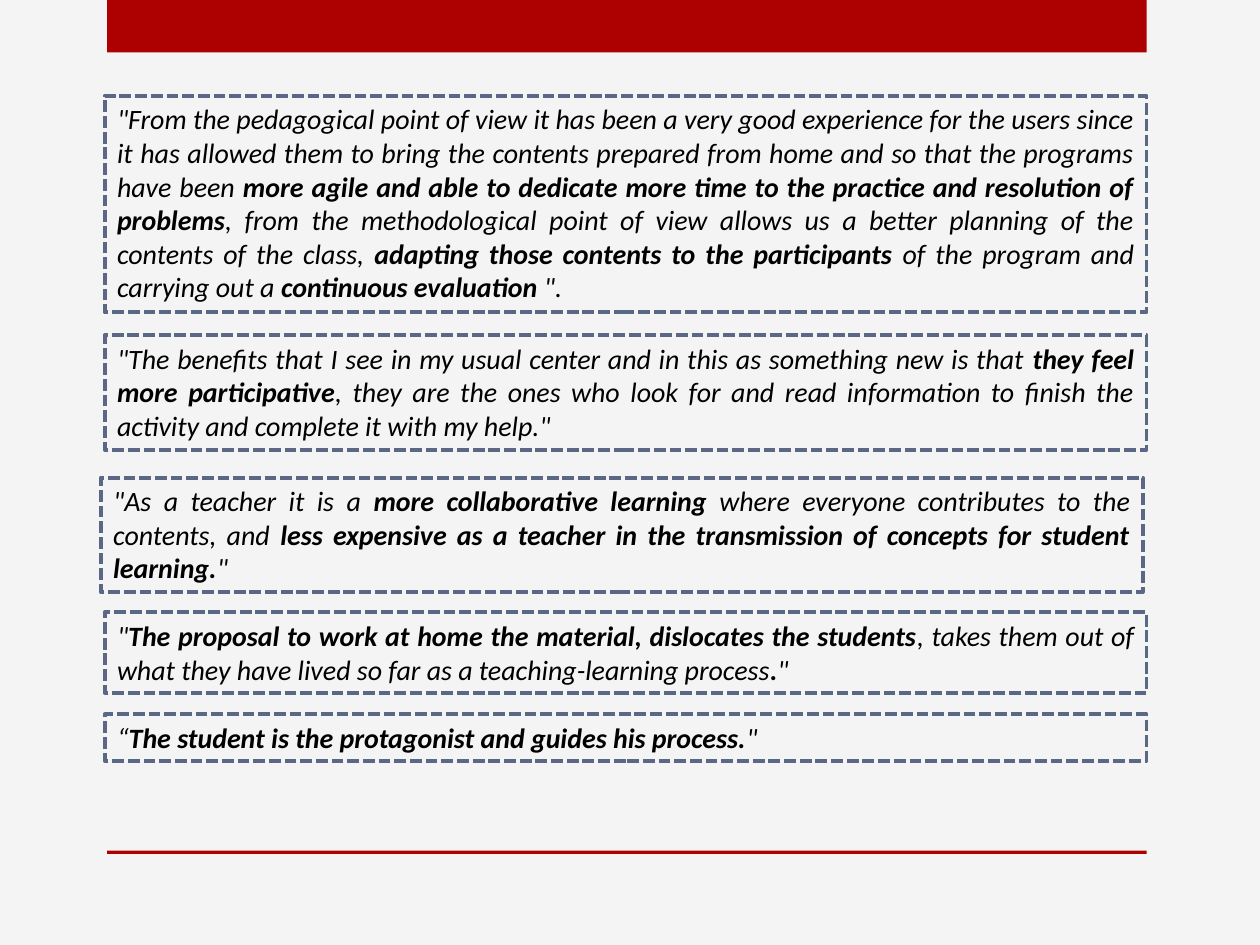
from pptx import Presentation
from pptx.dml.color import RGBColor
from pptx.enum.dml import MSO_LINE
from pptx.enum.shapes import MSO_SHAPE
from pptx.enum.text import MSO_ANCHOR, MSO_AUTO_SIZE, PP_ALIGN
from pptx.util import Pt

RED = RGBColor(0xAD, 0x01, 0x01)
SLATE = RGBColor(0x5A, 0x68, 0x85)
BLACK = RGBColor(0x00, 0x00, 0x00)
BACKGROUND = RGBColor(0xF4, 0xF4, 0xF4)

BAR_LEFT, BAR_WIDTH = 61.2, 594
QUOTE_LEFT, QUOTE_WIDTH = 59.8, 595.4

QUOTES = [
    (QUOTE_LEFT, 54.7, 123.8, [
        "\"From the pedagogical point of view it has been a very good experience for the users "
        "since it has allowed them to bring the contents prepared from home and so that the "
        "programs have been ",
        "more agile and able to dedicate more time to the practice and resolution of problems",
        ", from the methodological point of view allows us a better planning of the contents "
        "of the class, ",
        "adapting those contents to the participants",
        " of the program and carrying out a ",
        "continuous evaluation ",
        "\".",
    ]),
    (QUOTE_LEFT, 191.5, 65.5, [
        "\"The benefits that I see in my usual center and in this as something new is that ",
        "they feel more participative",
        ", they are the ones who look for and read information to finish the activity and "
        "complete it with my help.\"",
    ]),
    (QUOTE_LEFT - 2.2, 272.9, 65.5, [
        "\"As a teacher it is a ",
        "more collaborative learning ",
        "where everyone contributes to the contents, and ",
        "less expensive as a teacher in the transmission of concepts for student learning.",
        "\"",
    ]),
    (QUOTE_LEFT, 349.9, 46.1, [
        "\"",
        "The proposal to work at home the material, dislocates the students",
        ", takes them out of what they have lived so far as a teaching-learning process",
        ".",
        "\"",
    ]),
    (QUOTE_LEFT, 408.2, 26.6, [
        "“",
        "The student is the protagonist and guides his process.",
        "\"",
    ]),
]


class QuoteSlide:
    font_name = "Calibri"
    font_size = Pt(16)

    def __init__(self, slide):
        self.slide = slide
        fill = slide.background.fill
        fill.solid()
        fill.fore_color.rgb = BACKGROUND

    def rectangle(self, left, top, width, height):
        shape = self.slide.shapes.add_shape(
            MSO_SHAPE.RECTANGLE, Pt(left), Pt(top), Pt(width), Pt(height))
        shape.shadow.inherit = False
        return shape

    def bar(self, top, height):
        shape = self.rectangle(BAR_LEFT, top, BAR_WIDTH, height)
        shape.fill.solid()
        shape.fill.fore_color.rgb = RED
        shape.line.fill.background()

    def quote(self, left, top, height, parts):
        shape = self.rectangle(left, top, QUOTE_WIDTH, height)
        shape.fill.background()
        shape.line.color.rgb = SLATE
        shape.line.width = Pt(2.25)
        shape.line.dash_style = MSO_LINE.SQUARE_DOT
        text_frame = shape.text_frame
        text_frame.word_wrap = True
        text_frame.auto_size = MSO_AUTO_SIZE.SHAPE_TO_FIT_TEXT
        text_frame.vertical_anchor = MSO_ANCHOR.TOP
        paragraph = text_frame.paragraphs[0]
        paragraph.alignment = PP_ALIGN.JUSTIFY
        for index, part in enumerate(parts):
            run = paragraph.add_run()
            run.text = part
            run.font.name = self.font_name
            run.font.size = self.font_size
            run.font.color.rgb = BLACK
            run.font.italic = True
            run.font.bold = index % 2 == 1


def main():
    presentation = Presentation()
    presentation.slide_width = Pt(720)
    presentation.slide_height = Pt(540)
    blank_layout = presentation.slide_layouts[6]
    quote_slide = QuoteSlide(presentation.slides.add_slide(blank_layout))
    quote_slide.bar(0, 30)
    quote_slide.bar(486, 2)
    for left, top, height, parts in QUOTES:
        quote_slide.quote(left, top, height, parts)
    presentation.save("out.pptx")


if __name__ == "__main__":
    main()
